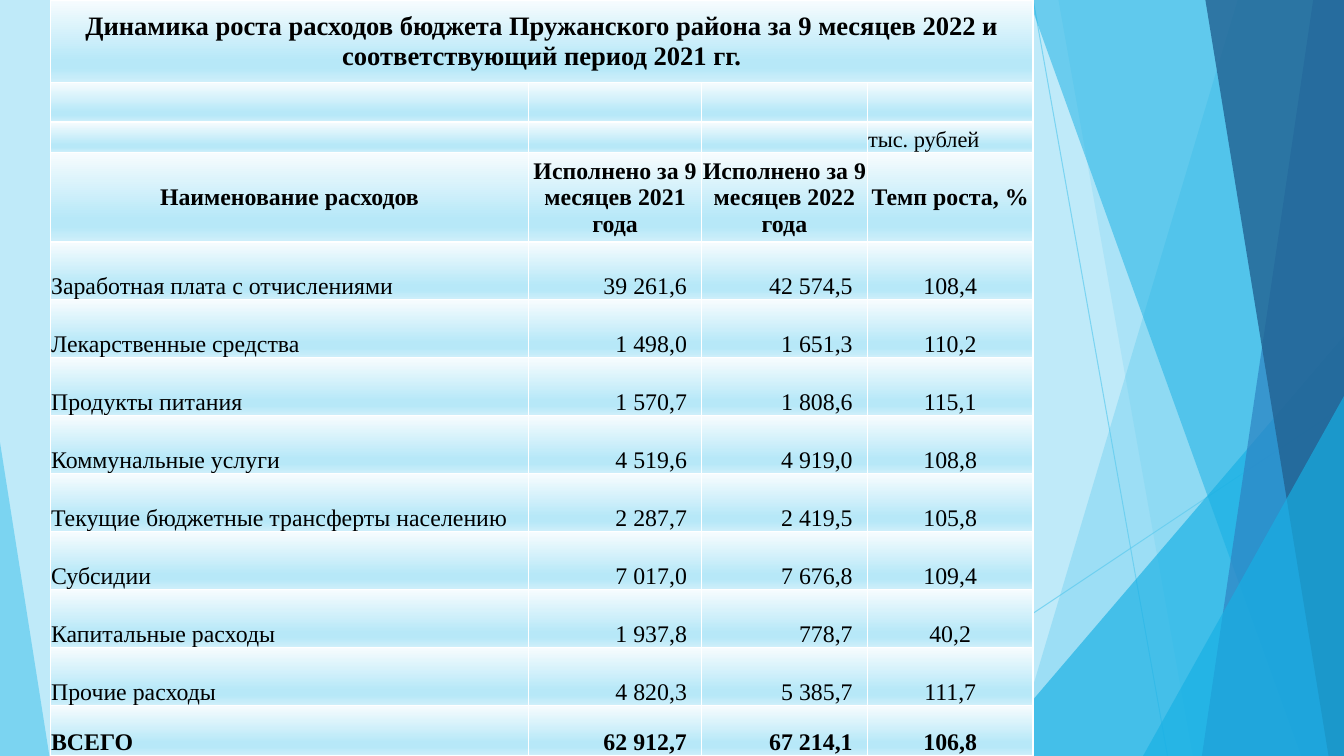
"""Build the slide on budget spending growth in the Pruzhany district."""
from dataclasses import dataclass

from lxml.etree import SubElement
from pptx import Presentation
from pptx.dml.color import RGBColor
from pptx.enum.shapes import MSO_CONNECTOR, MSO_SHAPE
from pptx.enum.text import MSO_ANCHOR, PP_ALIGN
from pptx.oxml.ns import qn
from pptx.util import Pt


@dataclass(frozen=True)
class Theme:
    font: str = "Times New Roman"
    background: str = "BFEAF9"
    text: str = "000000"
    border: str = "FFFFFF"
    sky: str = "5FCBEF"
    cyan: str = "17B0E4"
    blue: str = "2E83C3"
    navy: str = "226292"
    gradient: tuple = ((0, "F7FCFE"), (74, "B7E8F8"), (83, "B7E8F8"), (100, "CFEFFA"))
    title_size: float = 19
    unit_size: float = 16
    body_size: float = 17


def set_alpha(shape, percent):
    colour = shape.element.spPr.find(".//" + qn("a:srgbClr"))
    SubElement(colour, qn("a:alpha"), val=str(percent * 1000))


def style_cell(cell):
    properties = cell._tc.get_or_add_tcPr()
    for side in ("a:lnL", "a:lnR", "a:lnT", "a:lnB"):
        edge = SubElement(properties, qn(side), w=str(Pt(1)))
        SubElement(SubElement(edge, qn("a:solidFill")), qn("a:srgbClr"), val=theme.border)
    gradient = SubElement(properties, qn("a:gradFill"), rotWithShape="1")
    stops = SubElement(gradient, qn("a:gsLst"))
    for position, colour in theme.gradient:
        stop = SubElement(stops, qn("a:gs"), pos=str(position * 1000))
        SubElement(stop, qn("a:srgbClr"), val=colour)
    SubElement(gradient, qn("a:lin"), ang="5400000", scaled="0")


theme = Theme()
WIDTH, HEIGHT = 960, 540
presentation = Presentation()
presentation.slide_width, presentation.slide_height = Pt(WIDTH), Pt(HEIGHT)
slide = presentation.slides.add_slide(presentation.slide_layouts[6])
slide.background.fill.solid()
slide.background.fill.fore_color.rgb = RGBColor.from_string(theme.background)

for start_x, start_y, end_x, end_y in ((738, 0, 834, HEIGHT), (WIDTH, 290, 585, HEIGHT)):
    ray = slide.shapes.add_connector(
        MSO_CONNECTOR.STRAIGHT, Pt(start_x), Pt(start_y), Pt(end_x), Pt(end_y))
    ray.line.width = Pt(0.75)
    ray.line.color.rgb = RGBColor.from_string(theme.sky)
    set_alpha(ray, 70)
    SubElement(ray.element.spPr, qn("a:effectLst"))

facets = [
    ("band", (884, 723), theme.sky, 36),
    ("band", (756, 852), theme.sky, 20),
    ("triangle", (703.5, 240, 256.5, 1), theme.cyan, 66),
    ("band", (735, 929.5), theme.cyan, 50),
    ("band", (938, 858.5), theme.blue, 70),
    ("band", (861, 949), theme.navy, 80),
    ("triangle", (816.5, 283, 143.5, 1), theme.cyan, 66),
    ("triangle", (0, 316, 35.3, 0), theme.sky, 70),
]
for kind, geometry, colour, opacity in facets:
    if kind == "band":
        top_x, bottom_x = geometry
        outline = slide.shapes.build_freeform(Pt(top_x), 0)
        outline.add_line_segments(
            [(Pt(WIDTH), 0), (Pt(WIDTH), Pt(HEIGHT)), (Pt(bottom_x), Pt(HEIGHT))])
        facet = outline.convert_to_shape()
    else:
        left, top, width, apex = geometry
        facet = slide.shapes.add_shape(
            MSO_SHAPE.ISOSCELES_TRIANGLE, Pt(left), Pt(top), Pt(width), Pt(HEIGHT - top))
        facet.adjustments[0] = apex
    facet.shadow.inherit = False
    facet.line.fill.background()
    facet.fill.solid()
    facet.fill.fore_color.rgb = RGBColor.from_string(colour)
    set_alpha(facet, opacity)

rows = [
    ("Динамика роста расходов бюджета Пружанского района за 9 месяцев 2022 "
     "и соответствующий период 2021 гг.", "", "", ""),
    ("", "", "", ""),
    ("", "", "", "тыс. рублей"),
    ("Наименование расходов", "Исполнено за 9 месяцев 2021 года",
     "Исполнено за 9 месяцев 2022 года", "Темп роста, %"),
    ("Заработная плата с отчислениями", "39 261,6", "42 574,5", "108,4"),
    ("Лекарственные средства", "1 498,0", "1 651,3", "110,2"),
    ("Продукты питания", "1 570,7", "1 808,6", "115,1"),
    ("Коммунальные услуги", "4 519,6", "4 919,0", "108,8"),
    ("Текущие бюджетные трансферты населению", "2 287,7", "2 419,5", "105,8"),
    ("Субсидии", "7 017,0", "7 676,8", "109,4"),
    ("Капитальные расходы", "1 937,8", "778,7", "40,2"),
    ("Прочие расходы", "4 820,3", "5 385,7", "111,7"),
    ("ВСЕГО", "62 912,7", "67 214,1", "106,8"),
]
column_widths = [341.6, 123.6, 118.4, 118.4]
row_heights = [58.8, 28.4, 21.8, 63.9] + [41.38] * 8 + [36.06]
TITLE, UNIT, HEADER, TOTAL = 0, 2, 3, len(rows) - 1
column_aligns = [PP_ALIGN.LEFT, PP_ALIGN.RIGHT, PP_ALIGN.RIGHT, PP_ALIGN.CENTER]

spending = slide.shapes.add_table(
    len(rows), len(column_widths), Pt(36), 0, Pt(sum(column_widths)), Pt(HEIGHT)).table
spending.first_row = spending.horz_banding = False
for column, width in zip(spending.columns, column_widths):
    column.width = Pt(width)
for row, height in zip(spending.rows, row_heights):
    row.height = Pt(height)
spending.cell(TITLE, 0).merge(spending.cell(TITLE, 3))

for r, values in enumerate(rows):
    heading = r in (TITLE, HEADER)
    size = {TITLE: theme.title_size, HEADER: theme.body_size}.get(
        r, theme.body_size if r > HEADER else theme.unit_size)
    for c, value in enumerate(values):
        cell = spending.cell(r, c)
        style_cell(cell)
        cell.margin_left = cell.margin_right = cell.margin_top = Pt(0.5)
        cell.margin_bottom = 0
        cell.vertical_anchor = MSO_ANCHOR.MIDDLE if heading else MSO_ANCHOR.BOTTOM
        paragraph = cell.text_frame.paragraphs[0]
        if not value:
            SubElement(paragraph._p, qn("a:endParaRPr"), sz=str(size * 100))
            continue
        paragraph.text = value
        paragraph.alignment = PP_ALIGN.CENTER if heading else column_aligns[c]
        if r == UNIT:
            paragraph.alignment = PP_ALIGN.LEFT
        if r > HEADER and column_aligns[c] == PP_ALIGN.RIGHT:
            cell.margin_right = Pt(10.5)
        font = paragraph.runs[0].font
        font.name, font.size = theme.font, Pt(size)
        font.bold = heading or r == TOTAL
        font.color.rgb = RGBColor.from_string(theme.text)

presentation.save("out.pptx")
